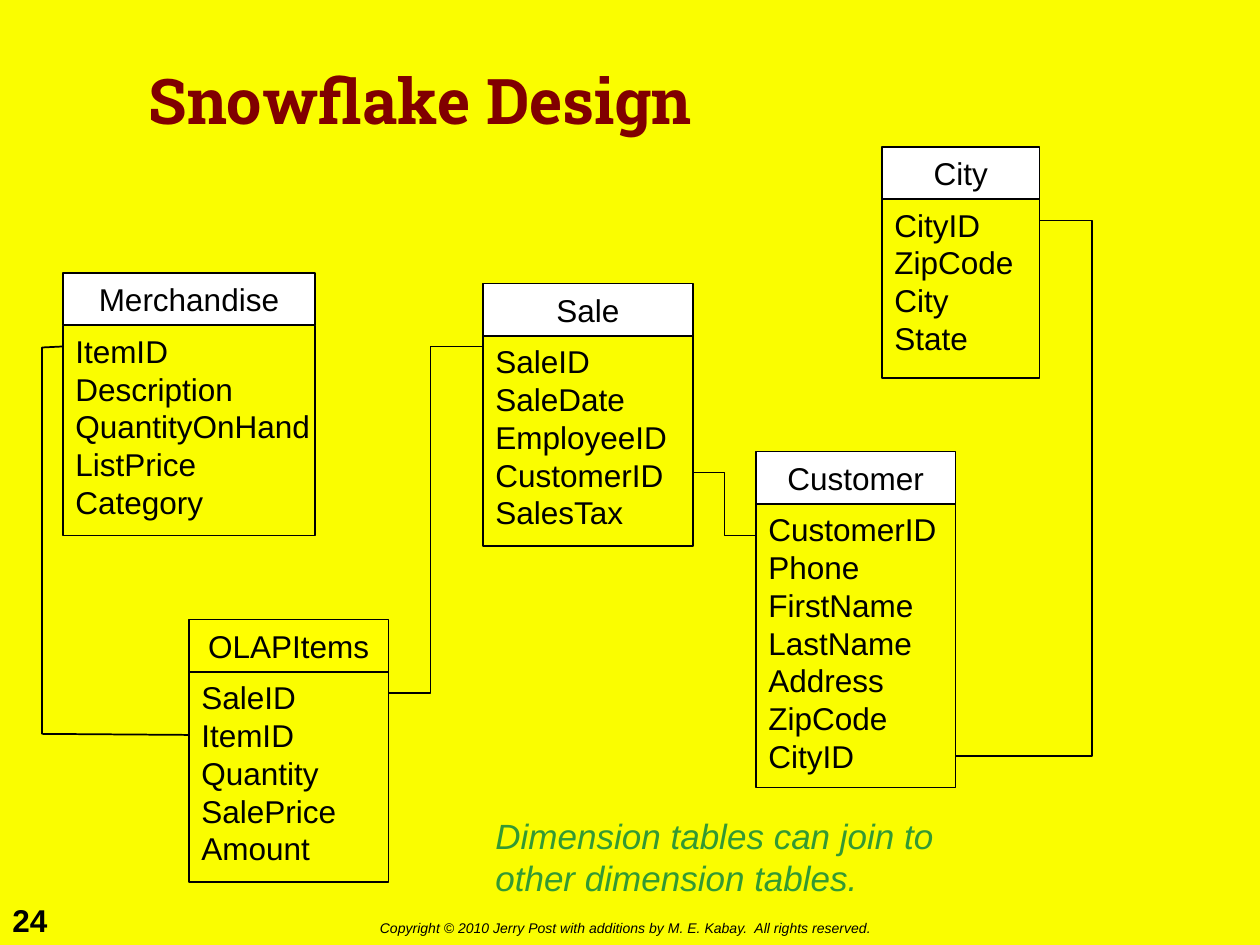
from pptx import Presentation
from pptx.dml.color import RGBColor
from pptx.enum.shapes import MSO_SHAPE
from pptx.enum.text import MSO_ANCHOR, PP_ALIGN
from pptx.util import Emu, Pt

PX = 7620  # 120 px to the inch
RECT = MSO_SHAPE.RECTANGLE
TOP, MIDDLE = MSO_ANCHOR.TOP, MSO_ANCHOR.MIDDLE
LEFT, CENTER = PP_ALIGN.LEFT, PP_ALIGN.CENTER
COLORS = {"back": "FAFD00", "head": "FFFFFF", "fact": "FFFF00",
          "ink": "000000", "title": "800000", "note": "339933"}
HEAD = 50  # height of a table's name bar

# Name, bar colour, left, top, width, body height, fields
TABLES = [
    ("OLAPItems", "fact", 180, 590, 190, 200,
     ["SaleID", "ItemID", "Quantity", "SalePrice", "Amount"]),
    ("Merchandise", "head", 60, 260, 240, 200,
     ["ItemID", "Description", "QuantityOnHand", "ListPrice", "Category"]),
    ("Sale", "head", 460, 270, 200, 200,
     ["SaleID", "SaleDate", "EmployeeID", "CustomerID", "SalesTax"]),
    ("Customer", "head", 720, 430, 190, 270,
     ["CustomerID", "Phone", "FirstName", "LastName", "Address",
      "ZipCode", "CityID"]),
    ("City", "head", 840, 140, 150, 170,
     ["CityID", "ZipCode", "City", "State"]),
]

# Join lines between key fields
JOINS = [
    [(60, 330), (40, 331), (40, 699), (180, 700)],
    [(370, 660), (410, 660), (410, 330), (460, 330)],
    [(660, 450), (690, 450), (690, 510), (720, 510)],
    [(910, 720), (1040, 720), (1040, 210), (990, 210)],
]

# Text, box, wrap, anchor, font settings
TEXTS = [
    ("24", (0, 852, 61, 48), False, TOP,
     dict(size=18, bold=True)),
    ("Copyright © 2010 Jerry Post with additions by M. E. Kabay.  "
     "All rights reserved.", (350, 870, 506, 29), False, TOP,
     dict(size=8, italic=True)),
    ("Snowflake Design", (130, 20, 940, 150), True, MIDDLE,
     dict(size=36, bold=True, color="title", face="Roboto Slab")),
    ("Dimension tables can join to other dimension tables.",
     (460, 770, 480, 92), True, TOP,
     dict(size=20, italic=True, color="note")),
]


def rgb(name):
    return RGBColor.from_string(COLORS[name])


def px(*vals):
    return [Emu(v * PX) for v in vals]


def write(shape, lines, wrap=False, anchor=TOP, align=LEFT, size=18,
          color="ink", face="Arial", bold=False, italic=False):
    frame = shape.text_frame
    frame.word_wrap = wrap
    frame.vertical_anchor = anchor
    for i, line in enumerate(lines):
        para = frame.add_paragraph() if i else frame.paragraphs[0]
        para.alignment = align
        run = para.add_run()
        run.text = line
        font = run.font
        font.size, font.name = Pt(size), face
        font.bold, font.italic = bold, italic
        font.color.rgb = rgb(color)


def style(shape, fill=None):
    shape.shadow.inherit = False
    if fill:
        shape.fill.solid()
        shape.fill.fore_color.rgb = rgb(fill)
    else:
        shape.fill.background()
    shape.line.color.rgb = rgb("ink")
    shape.line.width = Pt(1)


def add_box(shapes, box, lines, fill=None, **text):
    shape = shapes.add_shape(RECT, *px(*box))
    style(shape, fill)
    write(shape, lines, **text)


def main():
    deck = Presentation()
    deck.slide_width, deck.slide_height = px(1200, 900)
    slide = deck.slides.add_slide(deck.slide_layouts[6])
    slide.background.fill.solid()
    slide.background.fill.fore_color.rgb = rgb("back")
    shapes = slide.shapes

    # Title, note and footer
    for text, box, wrap, anchor, font in TEXTS:
        write(shapes.add_textbox(*px(*box)), [text], wrap, anchor, **font)

    # Tables: fields below a name bar
    for name, fill, x, y, w, h, fields in TABLES:
        add_box(shapes, (x, y + HEAD, w, h), fields)
        add_box(shapes, (x, y, w, HEAD), [name], fill,
                anchor=MIDDLE, align=CENTER)

    # Joins
    for start, *rest in JOINS:
        path = shapes.build_freeform(*start, scale=PX)
        path.add_line_segments(rest, close=False)
        style(path.convert_to_shape())

    deck.save("out.pptx")


if __name__ == "__main__":
    main()
